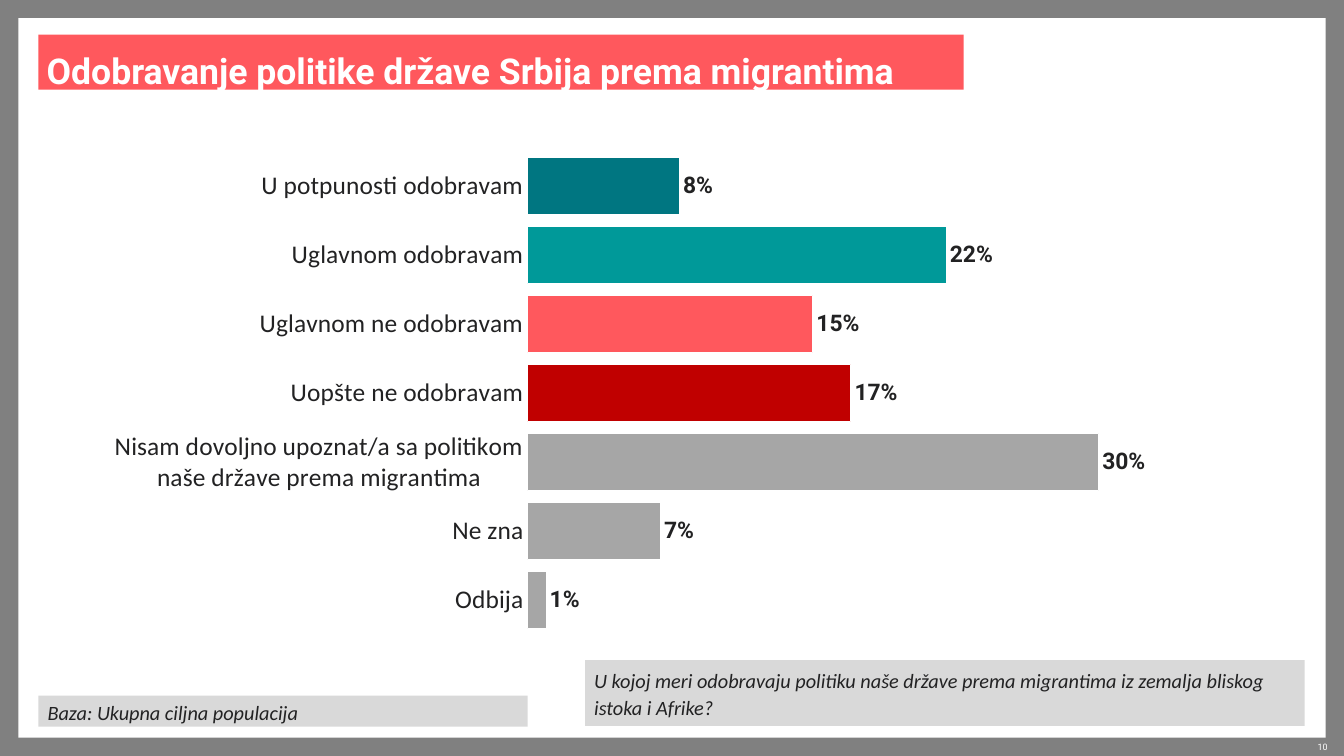
from lxml import etree
from pptx import Presentation
from pptx.chart.data import CategoryChartData
from pptx.dml.color import RGBColor
from pptx.enum.chart import XL_CHART_TYPE, XL_LABEL_POSITION, XL_TICK_LABEL_POSITION, XL_TICK_MARK
from pptx.enum.shapes import MSO_SHAPE
from pptx.enum.text import MSO_ANCHOR, MSO_AUTO_SIZE, PP_ALIGN
from pptx.oxml.ns import qn
from pptx.util import Inches, Pt

RECT = MSO_SHAPE.RECTANGLE
BAR = XL_CHART_TYPE.BAR_CLUSTERED
OUTSIDE_END = XL_LABEL_POSITION.OUTSIDE_END
NO_LABELS = XL_TICK_LABEL_POSITION.NONE
NO_TICKS = XL_TICK_MARK.NONE
MIDDLE = MSO_ANCHOR.MIDDLE
NO_FIT = MSO_AUTO_SIZE.NONE
LEFT, RIGHT = PP_ALIGN.LEFT, PP_ALIGN.RIGHT

TITLE = "Odobravanje politike države Srbija prema migrantima"
BASE = "Baza: Ukupna ciljna populacija"
QUESTION = ("U kojoj meri odobravaju politiku naše države prema migrantima "
            "iz zemalja bliskog istoka i Afrike?")
PAGE = "10"
ANSWERS = [
    ("U potpunosti odobravam", 8, "007681"),
    ("Uglavnom odobravam", 22, "009999"),
    ("Uglavnom ne odobravam", 15, "FF585D"),
    ("Uopšte ne odobravam", 17, "C00000"),
    ("Nisam dovoljno upoznat/a sa politikom naše države prema migrantima", 30, "A6A6A6"),
    ("Ne zna", 7, "A6A6A6"),
    ("Odbija", 1, "A6A6A6"),
]

SLIDE_W, SLIDE_H = 14.7, 8.27
MARGIN = 0.2
WHITE, INK, GREY, PALE, CORAL = "FFFFFF", "222223", "808080", "D9D9D9", "FF585D"
PLOT = {"x": 0.397, "y": 0.001, "w": 0.594, "h": 0.999}
NOTE = dict(size=16, italic=True, spacing=1.1, around=6, insets=(0.1, 0, 0.1, 0))


def rgb(value):
    return RGBColor.from_string(value)


def paint(fill, color):
    fill.solid()
    fill.fore_color.rgb = rgb(color)


def place(sp, left, top, width, height):
    sp.left, sp.top, sp.width, sp.height = map(Inches, (left, top, width, height))


def add_rect(s, box, color):
    sp = s.shapes.add_shape(RECT, *map(Inches, box))
    sp.shadow.inherit = False
    paint(sp.fill, color)
    sp.line.fill.background()
    return sp


def set_font(font, size, color, name="Calibri", bold=False, italic=False):
    font.size, font.name, font.bold, font.italic = Pt(size), name, bold, italic
    font.color.rgb = rgb(color)


def write(sp, text, size, color=INK, name="Calibri", bold=False, italic=False,
          align=LEFT, spacing=1.0, around=0, insets=(0, 0, 0, 0)):
    tf = sp.text_frame
    tf.word_wrap = True
    tf.auto_size = NO_FIT
    tf.vertical_anchor = MIDDLE
    tf.margin_left, tf.margin_top, tf.margin_right, tf.margin_bottom = map(Inches, insets)
    p = tf.paragraphs[0]
    p.alignment, p.line_spacing = align, spacing
    p.space_before = p.space_after = Pt(around)
    r = p.add_run()
    r.text = text
    set_font(r.font, size, color, name, bold, italic)
    return p


def remove_bullet(p):
    pPr = p._p.get_or_add_pPr()
    pPr.set("marL", "0")
    pPr.set("indent", "0")
    etree.SubElement(pPr, qn("a:buNone"))


def fix_plot_area(chart):
    """Pin the inner plot area to the PLOT fractions of the chart."""
    area = chart._chartSpace.chart.plotArea
    layout = area.find(qn("c:layout"))
    if layout is None:
        layout = etree.Element(qn("c:layout"))
        area.insert(0, layout)
    manual = etree.SubElement(layout, qn("c:manualLayout"))
    settings = {"layoutTarget": "inner", "xMode": "edge", "yMode": "edge", **PLOT}
    for tag, value in settings.items():
        etree.SubElement(manual, qn("c:" + tag)).set("val", str(value))


def add_answer_chart(s, box):
    data = CategoryChartData()
    data.categories = [label for label, _, _ in ANSWERS]
    data.add_series("Series 1", [value for _, value, _ in ANSWERS])
    chart = s.shapes.add_chart(BAR, *map(Inches, box), data).chart
    chart.has_legend = chart.has_title = False
    set_font(chart.font, 18, INK, "Roboto")
    fix_plot_area(chart)

    cat = chart.category_axis
    cat.reverse_order = True
    cat.format.line.fill.background()
    cat.major_tick_mark = NO_TICKS
    set_font(cat.tick_labels.font, 20, INK)

    val = chart.value_axis
    val.minimum_scale, val.maximum_scale = 0, 35
    val.has_major_gridlines = False
    val.tick_label_position = NO_LABELS
    val.major_tick_mark = NO_TICKS
    val.format.line.fill.background()

    plot = chart.plots[0]
    plot.gap_width = 20
    plot.vary_by_categories = False
    series = plot.series[0]
    for i, (_, _, color) in enumerate(ANSWERS):
        fmt = series.points[i].format
        paint(fmt.fill, color)
        fmt.line.color.rgb = rgb(WHITE)
        fmt.line.width = Pt(0.75)
    labels = series.data_labels
    labels.show_value = True
    labels.position = OUTSIDE_END
    labels.number_format = '#"%"'
    labels.number_format_is_linked = False
    set_font(labels.font, 18, INK, "Roboto", bold=True)


def main():
    prs = Presentation()
    prs.slide_width, prs.slide_height = Inches(SLIDE_W), Inches(SLIDE_H)
    s = prs.slides.add_slide(prs.slide_layouts[1])
    paint(s.background.fill, GREY)
    title, base = s.shapes.title, s.placeholders[1]

    panel = add_rect(s, (MARGIN, MARGIN, SLIDE_W - 2 * MARGIN, SLIDE_H - 2 * MARGIN), WHITE)
    title._element.addprevious(panel._element)

    place(title, 0.42, 0.38, 10.12, 0.6)
    paint(title.fill, CORAL)
    write(title, TITLE, 28, WHITE, "Roboto", bold=True, spacing=Pt(41),
          insets=(0.09, 0.08, 0.09, 0))

    place(base, 0.42, 7.61, 5.35, 0.34)
    paint(base.fill, PALE)
    remove_bullet(write(base, BASE, **NOTE))

    write(add_rect(s, (6.4, 7.22, 7.87, 0.72), PALE), QUESTION, **NOTE)
    add_answer_chart(s, (0.89, 1.65, 12.28, 5.29))

    number = s.shapes.add_textbox(*map(Inches, (13.73, 8.1, 0.79, 0.13)))
    write(number, PAGE, 7, WHITE, "Roboto", align=RIGHT, spacing=1.1)
    prs.save("out.pptx")


if __name__ == "__main__":
    main()
